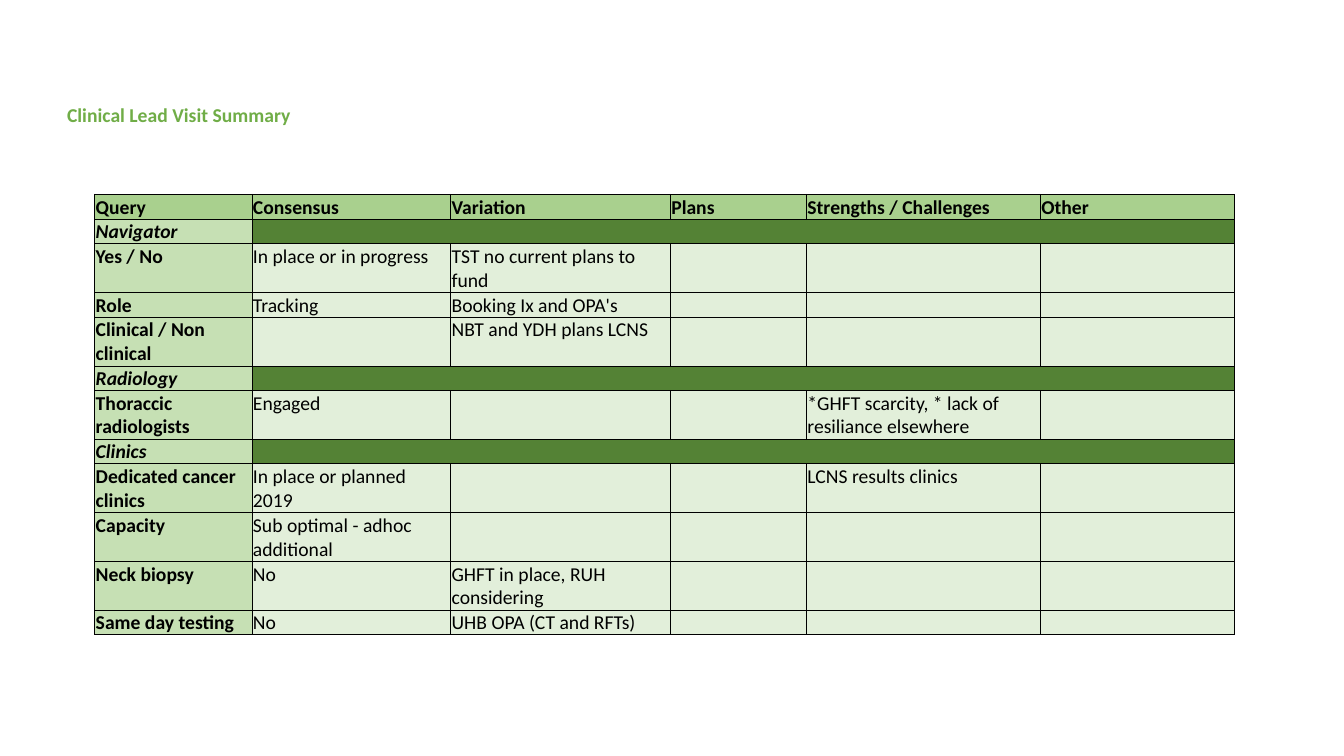
from lxml.etree import SubElement as Sub
from pptx import Presentation as Deck
from pptx.dml.color import RGBColor as Rgb
from pptx.oxml import parse_xml as make
from pptx.oxml.ns import nsdecls, qn
from pptx.util import Inches, Pt

WIDE, HIGH = 13.33, 7.5
LINE = 3.23
COLS = [11.7, 14.78, 16.35, 10.13, 17.4, 14.47]
HEAD = ["Query", "Consensus", "Variation", "Plans", "Strengths / Challenges", "Other"]
ROWS = [
    (1, HEAD),
    (1, ["Navigator"]),
    (2, ["Yes / No", "In place or in progress", "TST no current plans to fund"]),
    (1, ["Role", "Tracking", "Booking Ix and OPA's"]),
    (2, ["Clinical / Non clinical", "", "NBT and YDH plans LCNS"]),
    (1, ["Radiology"]),
    (2, ["Thoraccic radiologists", "Engaged", "", "",
         "*GHFT scarcity, * lack of resiliance elsewhere"]),
    (1, ["Clinics"]),
    (2, ["Dedicated cancer clinics", "In place or planned 2019", "", "",
         "LCNS results clinics"]),
    (2, ["Capacity", "Sub optimal - adhoc additional"]),
    (2, ["Neck biopsy", "No", "GHFT in place, RUH considering"]),
    (1, ["Same day testing", "No", "UHB OPA (CT and RFTs)"]),
]


def hue(code):
    return Rgb.from_string(code)


def across(share):
    return Inches(WIDE * share / 100)


def down(share):
    return Inches(HIGH * share / 100)


class Page:
    """Draws styled elements on one slide, with lengths in percent of its size."""

    face, size, ink = "Calibri", 14, "000000"

    def __init__(self, deck):
        self.slide = deck.slides.add_slide(deck.slide_layouts[6])

    def style(self, para, color, bold=False, slant=False):
        font = para.font
        font.name, font.size = self.face, Pt(self.size)
        font.bold, font.italic = bold, slant
        font.color.rgb = hue(color)

    def title(self, text, left, top, width, height, color):
        box = self.slide.shapes.add_textbox(
            across(left), down(top), across(width), down(height))
        box.text_frame.word_wrap = True
        para = box.text_frame.paragraphs[0]
        para.text = text
        para.line_spacing, para.space_before = 0.9, Pt(10)
        self.style(para, color, bold=True)

    def edge(self, cell, sides):
        props = cell._tc.get_or_add_tcPr()
        for spot, (side, width) in enumerate(sides.items()):
            props.insert(spot, make(
                f'<a:ln{side} {nsdecls("a")} w="{Pt(width)}"><a:solidFill>'
                f'<a:srgbClr val="{self.ink}"/></a:solidFill></a:ln{side}>'))

    def cell(self, cell, text, fill, bold, slant):
        cell.margin_left = cell.margin_right = cell.margin_top = Inches(0.01)
        cell.margin_bottom = 0
        cell.fill.solid()
        cell.fill.fore_color.rgb = hue(fill)
        para = cell.text_frame.paragraphs[0]
        para.text = text
        self.style(para, self.ink, bold, slant)
        if not text:
            Sub(para._p, qn("a:endParaRPr"), sz=str(self.size * 100))

    def table(self, rows, cols, left, top):
        high = sum(lines for lines, _ in rows) * LINE
        grid = self.slide.shapes.add_table(
            len(rows), len(cols), across(left), down(top),
            across(sum(cols)), down(high)).table
        grid.first_row = grid.horz_banding = False
        for col, share in zip(grid.columns, cols):
            col.width = across(share)
        last, end = len(rows) - 1, len(cols) - 1
        for r, (lines, texts) in enumerate(rows):
            grid.rows[r].height = down(lines * LINE)
            group = len(texts) == 1
            if group:
                grid.cell(r, 1).merge(grid.cell(r, end))
            for c in range(len(cols)):
                if r == 0:
                    fill = "A9D08E"
                elif c == 0:
                    fill = "C6E0B4"
                else:
                    fill = "548235" if group else "E2EFDA"
                text = texts[c] if c < len(texts) else ""
                cell = grid.cell(r, c)
                self.cell(cell, text, fill, r == 0 or c == 0, group)
                right = c == end or group and c > 0
                self.edge(cell, {
                    "L": 1 if c == 0 else 0.5, "R": 1 if right else 0.5,
                    "T": 1 if r == 0 else 0.5, "B": 1 if r == last else 0.5})


def main():
    deck = Deck()
    deck.slide_width, deck.slide_height = Inches(WIDE), Inches(HIGH)
    page = Page(deck)
    page.title("Clinical Lead Visit Summary", 4.25, 13.33, 80.55, 4.8, "70AD47")
    page.table(ROWS, COLS, 7.05, 25.73)
    deck.save("out.pptx")


if __name__ == "__main__":
    main()
